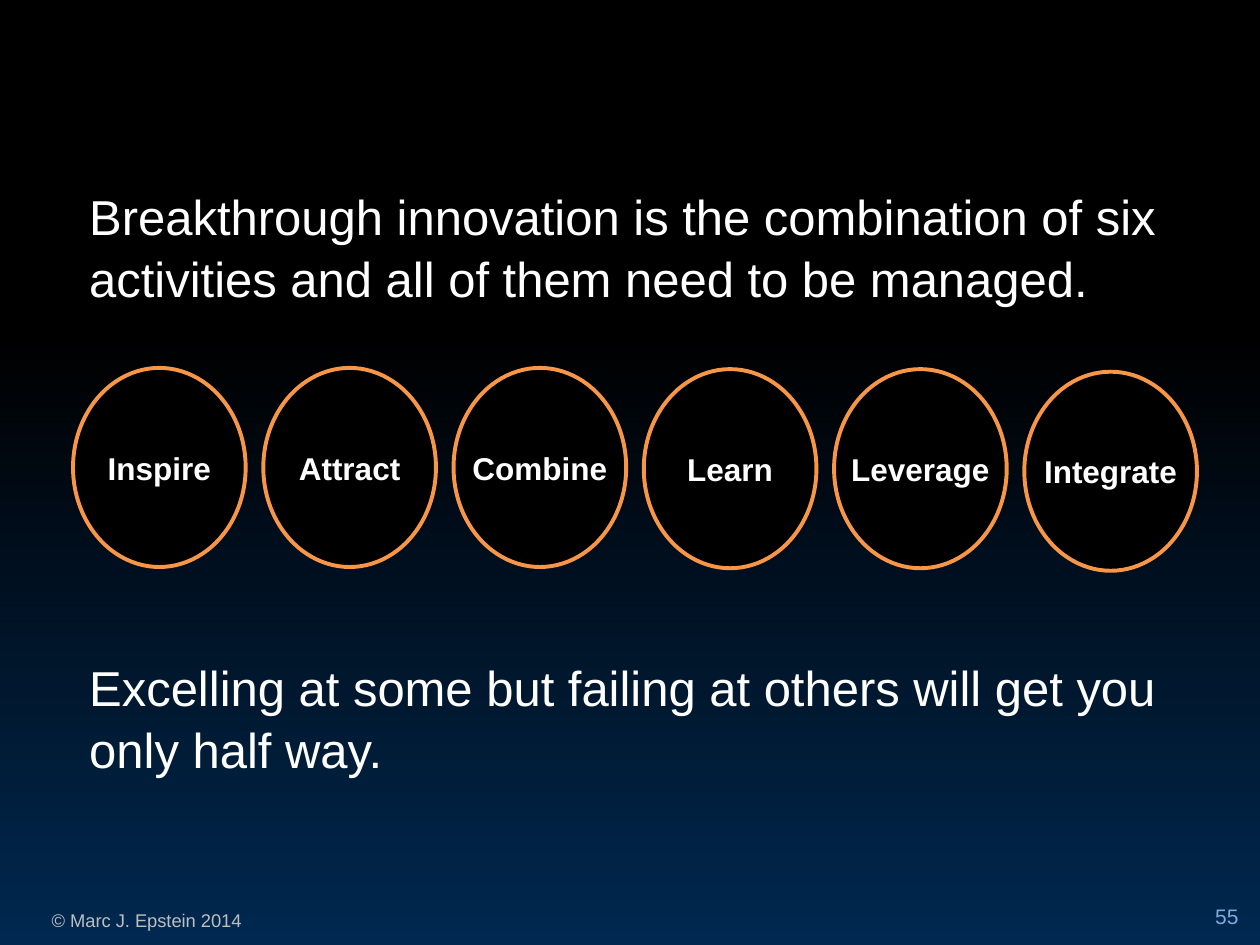
from pptx import Presentation
from pptx.dml.color import RGBColor
from pptx.enum import shapes, text
from pptx.util import Inches, Pt

WHITE, BLACK, NAVY, ORANGE = "FFFFFF", "000000", "002850", "F79646"
# Each activity with the top of its circle in inches
ACTIVITIES = [("Inspire", 2.92), ("Attract", 2.92), ("Combine", 2.92),
              ("Learn", 2.93), ("Leverage", 2.93), ("Integrate", 2.95)]


def rgb(value):
    return RGBColor.from_string(value)


def write(shape, wording, size, color, align, bold=False):
    """Put one styled paragraph in a shape and return it."""
    shape.text_frame.text = wording
    para = shape.text_frame.paragraphs[0]
    para.alignment = align
    font = para.runs[0].font
    font.name, font.size, font.bold = "Arial", Pt(size), bold
    font.color.rgb = rgb(color)
    return para


def add_label(page, left, top, width, height, wording, size, color, align):
    box = page.shapes.add_textbox(Inches(left), Inches(top),
                                  Inches(width), Inches(height))
    box.text_frame.word_wrap = True
    return box, write(box, wording, size, color, align)


def paint_background(page):
    fill = page.background.fill
    fill.gradient()
    fill.gradient_angle = 270
    for stop, position, color in zip(fill.gradient_stops, (0.35, 1), (BLACK, NAVY)):
        stop.position = position
        stop.color.rgb = rgb(color)


def add_statement(page, left, top, wording):
    _, para = add_label(page, left, top, 8.89, 1.1, wording, 28, WHITE,
                        text.PP_ALIGN.LEFT)
    para.line_spacing = 1.05


def add_activities(page, left, pitch, width, height):
    for index, (name, top) in enumerate(ACTIVITIES):
        circle = page.shapes.add_shape(
            shapes.MSO_SHAPE.OVAL, Inches(left + index * pitch), Inches(top),
            Inches(width), Inches(height))
        circle.shadow.inherit = False
        circle.fill.solid()
        circle.fill.fore_color.rgb = rgb(BLACK)
        circle.line.color.rgb = rgb(ORANGE)
        circle.line.width = Pt(2.25)
        circle.text_frame.word_wrap = False
        circle.text_frame.vertical_anchor = text.MSO_ANCHOR.MIDDLE
        write(circle, name, 18, WHITE, text.PP_ALIGN.CENTER, bold=True)


def add_footer(page):
    add_label(page, 0, 7.17, 2.33, 0.28, "© Marc J. Epstein 2014", 10.5,
              "BFBFBF", text.PP_ALIGN.CENTER)
    number, _ = add_label(page, 9, 7.02, 0.83, 0.4, "55", 12, "81ABE0",
                          text.PP_ALIGN.RIGHT)
    frame = number.text_frame
    frame.margin_left = frame.margin_right = 0
    frame.vertical_anchor = text.MSO_ANCHOR.BOTTOM


def main():
    deck = Presentation()
    deck.slide_width, deck.slide_height = Inches(10), Inches(7.5)
    page = deck.slides.add_slide(deck.slide_layouts[6])
    paint_background(page)
    add_footer(page)
    add_statement(page, 0.61, 1.41, "Breakthrough innovation is the combination of "
                  "six activities and all of them need to be managed.")
    add_statement(page, 0.61, 5.15, "Excelling at some but failing at others will "
                  "get you only half way.")
    add_activities(page, left=0.58, pitch=1.51, width=1.37, height=1.58)
    deck.save("out.pptx")


if __name__ == "__main__":
    main()
